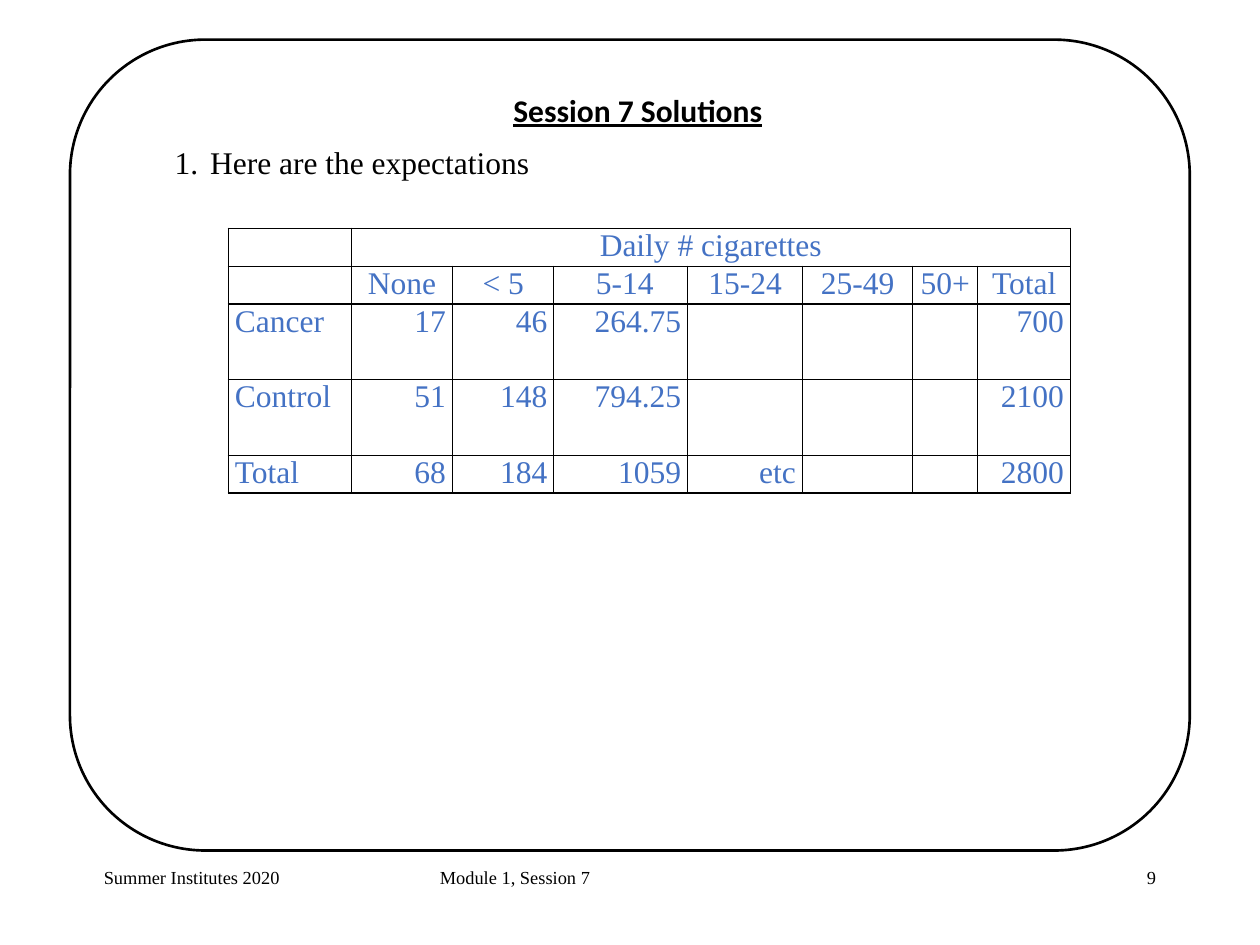
import pptx
import pptx.util
import pptx.dml.color
import pptx.enum.shapes
import pptx.enum.text
import lxml.etree
from dataclasses import dataclass

Pt = pptx.util.Pt
RGB = pptx.dml.color.RGBColor
ALIGN = pptx.enum.text.PP_ALIGN


@dataclass(frozen=True)
class Theme:
    ink: str = "000000"
    accent: str = "4472C4"
    serif: str = "Times New Roman"
    sans: str = "Calibri"
    body: int = 24
    footer: int = 14


theme = Theme()


def write(p, text, size=theme.body, font=theme.serif, color=theme.ink,
          bold=False, underline=False, align=ALIGN.LEFT):
    p.alignment = align
    r = p.add_run()
    r.text = text
    r.font.size = Pt(size)
    r.font.name = font
    r.font.bold = bold
    r.font.underline = underline
    r.font.color.rgb = RGB.from_string(color)


def add_xml(parent, tag, **attrs):
    ns = "http://schemas.openxmlformats.org/drawingml/2006/main"
    return lxml.etree.SubElement(parent, f"{{{ns}}}{tag}", attrs)


prs = pptx.Presentation()
prs.slide_width, prs.slide_height = Pt(960), Pt(720)
s = prs.slides.add_slide(prs.slide_layouts[6])

# Rounded frame
frame = s.shapes.add_shape(pptx.enum.shapes.MSO_SHAPE.ROUNDED_RECTANGLE,
                           Pt(53.3), Pt(30.2), Pt(853.2), Pt(617.8))
frame.adjustments[0] = 0.167
frame.shadow.inherit = False
frame.fill.background()
frame.line.color.rgb = RGB.from_string(theme.ink)
frame.line.width = Pt(2)

# Footer
for text, left, width, align in [
    ("Summer Institutes 2020", 72, 200, ALIGN.LEFT),
    ("Module 1, Session 7", 328, 304, ALIGN.LEFT),
    ("9", 688, 200, ALIGN.RIGHT),
]:
    tf = s.shapes.add_textbox(Pt(left), Pt(656), Pt(width), Pt(48)).text_frame
    tf.word_wrap = True
    write(tf.paragraphs[0], text, size=theme.footer, align=align)

# Title and numbered item
tf = s.shapes.add_textbox(Pt(126), Pt(66), Pt(720), Pt(74)).text_frame
tf.word_wrap = True
tf.auto_size = pptx.enum.text.MSO_AUTO_SIZE.SHAPE_TO_FIT_TEXT
write(tf.paragraphs[0], "Session 7 Solutions", font=theme.sans, bold=True,
      underline=True, align=ALIGN.CENTER)
p = tf.add_paragraph()
write(p, "Here are the expectations")
p.line_spacing = 1.07
p.space_before, p.space_after = Pt(8.4), Pt(12)
pPr = p._p.get_or_add_pPr()
pPr.set("marL", str(Pt(27)))
pPr.set("indent", str(-Pt(27)))
add_xml(pPr, "buFont", typeface=theme.serif)
add_xml(pPr, "buAutoNum", type="arabicPeriod")

# Table of expectations
rows = [
    ["", "Daily # cigarettes", "", "", "", "", "", ""],
    ["", "None", "< 5", " 5-14", "15-24", "25-49", "50+", "Total"],
    ["Cancer", "17", "46", "264.75", "", "", "", "700"],
    ["Control", "51", "148", "794.25", "", "", "", "2100"],
    ["Total", "68", "184", "1059", "etc", "", "", "2800"],
]
widths = [93.6, 77.2, 77.2, 102, 87.4, 84, 49.7, 70.6]
heights = [28.8, 28.8, 57.6, 57.6, 28.8]
last_row, last_col = len(rows) - 1, len(widths) - 1

table = s.shapes.add_table(len(rows), len(widths), Pt(174), Pt(174),
                           Pt(sum(widths)), Pt(sum(heights))).table
table.first_row = table.horz_banding = False
for column, width in zip(table.columns, widths):
    column.width = Pt(width)
for row, height in zip(table.rows, heights):
    row.height = Pt(height)
table.cell(0, 1).merge(table.cell(0, last_col))

for i, row in enumerate(rows):
    for j, text in enumerate(row):
        cell = table.cell(i, j)
        cell.margin_left = cell.margin_right = Pt(5)
        cell.margin_top = cell.margin_bottom = Pt(0)
        if text:
            align = (ALIGN.CENTER if i < 2 else
                     ALIGN.LEFT if j == 0 else ALIGN.RIGHT)
            write(cell.text_frame.paragraphs[0], text, color=theme.accent,
                  align=align)
        tcPr = cell._tc.get_or_add_tcPr()
        for side, outer in [("lnL", j == 0), ("lnR", j == last_col),
                            ("lnT", i == 0), ("lnB", i == last_row)]:
            ln = add_xml(tcPr, side, w=str(Pt(1.5 if outer else 1)))
            add_xml(add_xml(ln, "solidFill"), "srgbClr", val=theme.ink)
        cell.fill.background()

prs.save("out.pptx")
